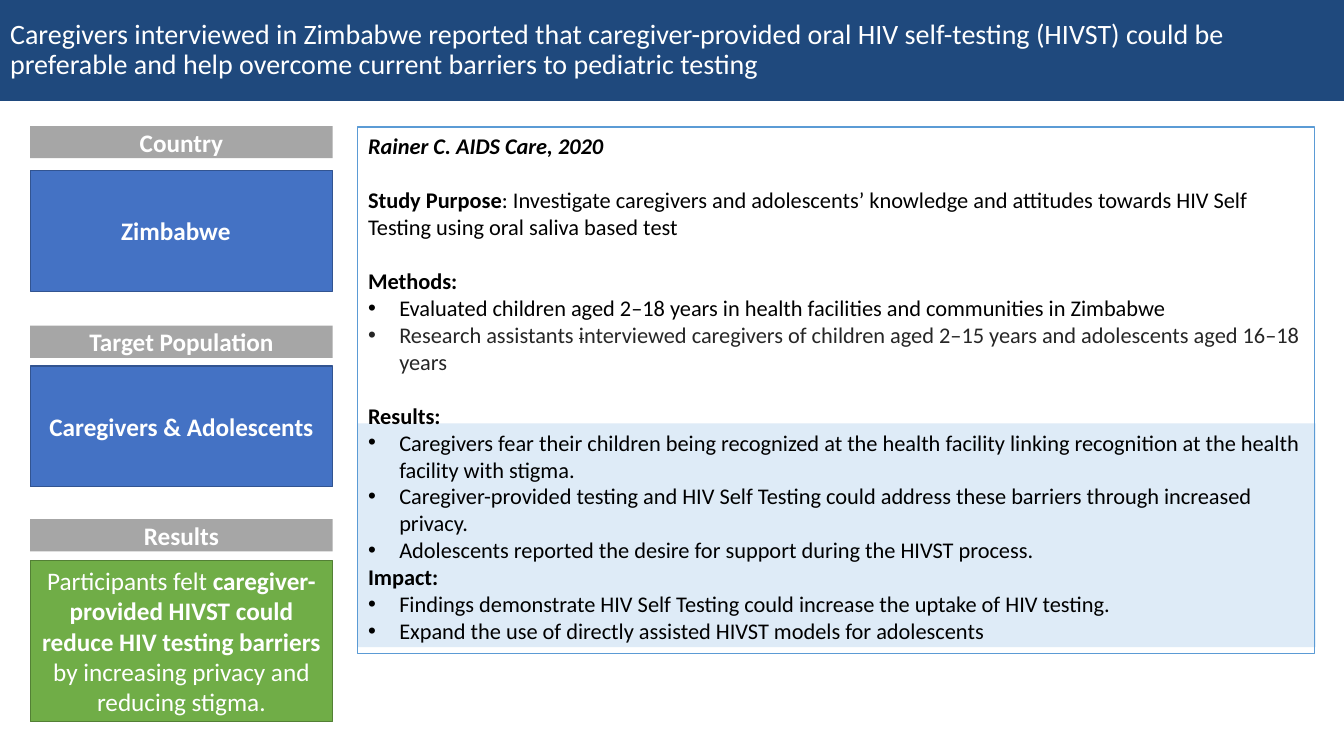
from dataclasses import dataclass

import pptx
import pptx.dml.color
import pptx.enum.shapes
import pptx.enum.text
import pptx.oxml.ns
import pptx.util
from lxml import etree

Inches = pptx.util.Inches
ALIGN = pptx.enum.text.PP_ALIGN
ANCHOR = pptx.enum.text.MSO_ANCHOR


@dataclass(frozen=True)
class Theme:
    font: str = "Calibri"
    title_size: float = 20
    panel_size: float = 18
    study_size: float = 16
    section_gap: float = 19.5
    white: str = "FFFFFF"
    black: str = "000000"
    dark_gray: str = "262626"
    gray: str = "A6A6A6"
    navy: str = "1F497D"
    blue: str = "4472C4"
    blue_edge: str = "325491"
    green: str = "70AD47"
    green_edge: str = "538035"
    pale_blue: str = "DEEBF7"
    frame: str = "5B9BD5"


THEME = Theme()


@dataclass(frozen=True)
class Span:
    text: str
    bold: bool = False
    italic: bool = False
    strike: bool = False
    color: str = THEME.black


@dataclass(frozen=True)
class Line:
    spans: tuple[Span, ...]
    bullet: bool = False
    gap_before: bool = False


@dataclass(frozen=True)
class Panel:
    heading: str
    heading_top: float
    box_top: float
    box_height: float
    spans: tuple[Span, ...]
    fill: str = THEME.blue
    edge: str = THEME.blue_edge
    right_inset: float = 0.1


def light(text: str, bold: bool = True) -> Span:
    return Span(text, bold=bold, color=THEME.white)


def bullet(*spans: Span) -> Line:
    return Line(spans, bullet=True)


def heading(text: str, gap_before: bool = True) -> Line:
    return Line((Span(text, bold=True),), gap_before=gap_before)


PANELS = (
    Panel("Country", 1.25, 1.69, 1.2, (light("Zimbabwe"),), right_inset=0.21),
    Panel("Target Population", 3.23, 3.63, 1.2, (light("Caregivers & Adolescents"),)),
    Panel("Results", 5.15, 5.56, 1.6, (
        light("Participants felt ", bold=False),
        light("caregiver-provided HIVST could reduce HIV testing barriers "),
        light("by increasing privacy and reducing stigma.", bold=False),
    ), THEME.green, THEME.green_edge),
)

STUDY = (
    Line((Span("Rainer C. AIDS Care, 2020", bold=True, italic=True),)),
    Line((
        Span("Study Purpose", bold=True),
        Span(": Investigate caregivers and adolescents’ knowledge and attitudes "
             "towards HIV Self Testing using oral saliva based test"),
    ), gap_before=True),
    heading("Methods:"),
    bullet(Span("Evaluated children aged 2–18 years in health facilities and "
                "communities in Zimbabwe")),
    bullet(
        Span("Research assistants ", color=THEME.dark_gray),
        Span("i", strike=True, color=THEME.dark_gray),
        Span("nterviewed caregivers of children aged 2–15 years and adolescents "
             "aged 16–18 years", color=THEME.dark_gray),
    ),
    heading("Results:"),
    bullet(Span("Caregivers fear their children being recognized at the health facility "
                "linking recognition at the health facility with stigma.")),
    bullet(Span("Caregiver-provided testing and HIV Self Testing could address these "
                "barriers through increased privacy.")),
    bullet(Span("Adolescents reported the desire for support during the HIVST process.")),
    heading("Impact:", gap_before=False),
    bullet(Span("Findings demonstrate HIV Self Testing could increase the uptake of "
                "HIV testing.")),
    bullet(Span("Expand the use of directly assisted HIVST models for adolescents")),
)


def rgb(color: str) -> pptx.dml.color.RGBColor:
    return pptx.dml.color.RGBColor.from_string(color)


def add_text(para, text: str, *, size: float, color: str, bold: bool = False,
             italic: bool = False, strike: bool = False) -> None:
    run = para.add_run()
    run.text = text
    run.font.name = THEME.font
    run.font.size = pptx.util.Pt(size)
    run.font.bold = bold
    run.font.italic = italic
    run.font.color.rgb = rgb(color)
    if strike:
        run._r.get_or_add_rPr().set("strike", "sngStrike")


def add_spans(para, spans: tuple[Span, ...], size: float) -> None:
    for span in spans:
        add_text(para, span.text, size=size, color=span.color, bold=span.bold,
                 italic=span.italic, strike=span.strike)


def set_list_style(para, bulleted: bool) -> None:
    props = para._p.get_or_add_pPr()
    indent = Inches(0.31) if bulleted else 0
    props.set("marL", str(indent))
    props.set("indent", str(-indent))
    qn = pptx.oxml.ns.qn
    if bulleted:
        etree.SubElement(props, qn("a:buFont")).set("typeface", "Arial")
        etree.SubElement(props, qn("a:buChar")).set("char", "•")
    else:
        etree.SubElement(props, qn("a:buNone"))


def place(box, left: float, top: float, width: float, height: float) -> None:
    box.left, box.top = Inches(left), Inches(top)
    box.width, box.height = Inches(width), Inches(height)


def set_frame(box, anchor, right_inset: float = 0.1):
    frame = box.text_frame
    frame.word_wrap = True
    frame.auto_size = pptx.enum.text.MSO_AUTO_SIZE.NONE
    frame.vertical_anchor = anchor
    frame.margin_right = Inches(right_inset)
    return frame


def add_box(page, left: float, top: float, width: float, height: float, *,
            fill: str, edge: str | None = None):
    box = page.shapes.add_shape(pptx.enum.shapes.MSO_SHAPE.RECTANGLE, Inches(left),
                                Inches(top), Inches(width), Inches(height))
    box.shadow.inherit = False
    box.fill.solid()
    box.fill.fore_color.rgb = rgb(fill)
    if edge:
        box.line.color.rgb = rgb(edge)
        box.line.width = pptx.util.Pt(1)
    else:
        box.line.fill.background()
    return box


def add_centered(box, spans: tuple[Span, ...], right_inset: float = 0.1) -> None:
    para = set_frame(box, ANCHOR.MIDDLE, right_inset).paragraphs[0]
    para.alignment = ALIGN.CENTER
    add_spans(para, spans, THEME.panel_size)


def add_title(page) -> None:
    title = page.shapes.title
    place(title, 0, 0, 13.33, 1)
    title.fill.solid()
    title.fill.fore_color.rgb = rgb(THEME.navy)
    para = set_frame(title, ANCHOR.MIDDLE).paragraphs[0]
    para.alignment = ALIGN.LEFT
    para.line_spacing = 0.9
    add_text(para, "Caregivers interviewed in Zimbabwe reported that caregiver-provided "
             "oral HIV self-testing (HIVST) could be preferable and help overcome "
             "current barriers to pediatric testing",
             size=THEME.title_size, color=THEME.white)


def add_panel(page, panel: Panel) -> None:
    label = add_box(page, 0.3, panel.heading_top, 3, 0.32, fill=THEME.gray)
    add_centered(label, (light(panel.heading),))
    box = add_box(page, 0.3, panel.box_top, 3, panel.box_height,
                  fill=panel.fill, edge=panel.edge)
    add_centered(box, panel.spans, panel.right_inset)


def add_study(page) -> None:
    body = page.placeholders[1]
    place(body, 3.55, 1.26, 9.49, 5.22)
    body.line.color.rgb = rgb(THEME.frame)
    body.line.width = pptx.util.Pt(0.75)
    frame = set_frame(body, ANCHOR.TOP)
    for index, line in enumerate(STUDY):
        para = frame.add_paragraph() if index else frame.paragraphs[0]
        para.space_before = pptx.util.Pt(THEME.section_gap if line.gap_before else 0)
        set_list_style(para, line.bullet)
        add_spans(para, line.spans, THEME.study_size)
    # Highlight behind the findings
    highlight = add_box(page, 3.55, 4.2, 9.5, 2.22, fill=THEME.pale_blue)
    body.element.addprevious(highlight.element)


def main() -> None:
    deck = pptx.Presentation()
    deck.slide_width, deck.slide_height = Inches(13.33), Inches(7.5)
    page = deck.slides.add_slide(deck.slide_layouts[1])
    add_title(page)
    # Left column
    for panel in PANELS:
        add_panel(page, panel)
    # Study summary
    add_study(page)
    deck.save("out.pptx")


if __name__ == "__main__":
    main()
